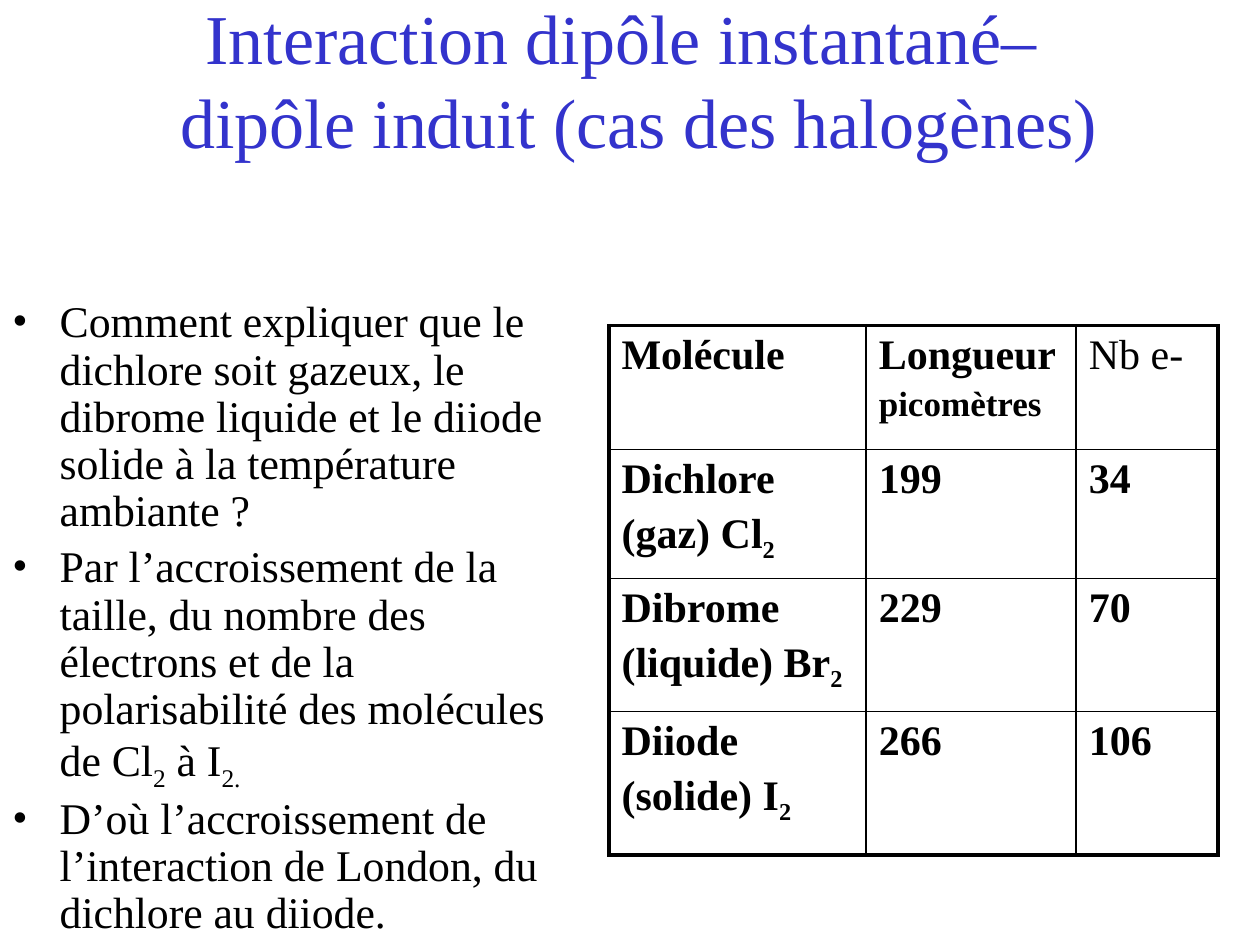
from lxml import etree
from pptx import Presentation
from pptx import util as u
from pptx.dml.color import RGBColor
from pptx.enum import text
from pptx.oxml import ns

BLUE = RGBColor(0x33, 0x33, 0xCC)
BLACK = RGBColor(0, 0, 0)
FONT = "Times New Roman"
THICK, THIN = 2.25, 1

TITLE = ["Interaction dipôle instantané– ", " dipôle induit (cas des halogènes)"]
# Odd parts between "~" marks are subscripts.
POINTS = [
    "Comment expliquer que le dichlore soit gazeux, le dibrome liquide "
    "et le diiode solide à la température ambiante ?",
    "Par l’accroissement de la taille, du nombre des électrons et de la "
    "polarisabilité des molécules de Cl~2~ à I~2.~",
    "D’où l’accroissement de l’interaction de London, du dichlore au diiode.",
]
# Each cell is a list of (text, size, bold) lines.
HEAD = [
    [("Molécule", 24, True)],
    [("Longueur", 24, True), ("picomètres", 20, True)],
    [("Nb e-", 24, False)],
]
DATA = [
    ("Dichlore", "(gaz) Cl~2~", "199", "34"),
    ("Dibrome", "(liquide) Br~2~", "229", "70"),
    ("Diiode", "(solide) I~2~", "266", "106"),
]
COLS = [147, 120, 81]
ROWS = [71, 71, 76, 82]


def sub(parent, tag, **attrs):
    """Append a drawing element to parent."""
    return etree.SubElement(parent, ns.qn("a:" + tag), attrs)


class Page:
    def __init__(self, slide):
        self.slide = slide

    def runs(self, para, words, size, color=BLACK, bold=False):
        """Add words to para, one run for each plain or subscript part."""
        for i, part in enumerate(words.split("~")):
            if not part:
                continue
            run = para.add_run()
            run.text = part
            font = run.font
            font.name, font.size, font.bold = FONT, u.Pt(size), bold
            font.color.rgb = color
            if i % 2:
                run._r.get_or_add_rPr().set("baseline", "-25000")

    def paras(self, frame, count):
        """Yield count paragraphs, starting with the one already there."""
        for i in range(count):
            yield frame.add_paragraph() if i else frame.paragraphs[0]

    def title(self, lines, x, y, w, h):
        shape = self.slide.shapes.title
        shape.left, shape.top, shape.width, shape.height = map(u.Pt, (x, y, w, h))
        frame = shape.text_frame
        frame.auto_size = text.MSO_AUTO_SIZE.NONE
        frame.vertical_anchor = text.MSO_ANCHOR.MIDDLE
        para = frame.paragraphs[0]
        para.alignment = text.PP_ALIGN.CENTER
        for i, line in enumerate(lines):
            if i:
                para.add_line_break()
            self.runs(para, line, 40, BLUE)

    def list(self, items, x, y, w, h, size=25):
        frame = self.slide.shapes.add_textbox(*map(u.Pt, (x, y, w, h))).text_frame
        frame.word_wrap = True
        for para, item in zip(self.paras(frame, len(items)), items):
            para.line_spacing = 0.9
            para.space_before = u.Pt(size * 0.2)
            props = para._p.get_or_add_pPr()
            props.set("marL", str(u.Pt(27)))
            props.set("indent", str(u.Pt(-27)))
            sub(props, "buFont", typeface=FONT)
            sub(props, "buChar", char="•")
            self.runs(para, item, size)

    def edge(self, cell, side, width):
        line = sub(cell._tc.get_or_add_tcPr(), "ln" + side, w=str(u.Pt(width)))
        sub(sub(line, "solidFill"), "srgbClr", val=str(BLACK))

    def table(self, rows, x, y, cols, heights):
        box = map(u.Pt, (x, y, sum(cols), sum(heights)))
        table = self.slide.shapes.add_table(len(rows), len(cols), *box).table
        table.first_row = table.horz_banding = False
        for col, width in zip(table.columns, cols):
            col.width = u.Pt(width)
        for row, height in zip(table.rows, heights):
            row.height = u.Pt(height)
        for r, row in enumerate(rows):
            for c, lines in enumerate(row):
                cell = table.cell(r, c)
                outer = {"L": c == 0, "R": c == len(cols) - 1,
                         "T": r == 0, "B": r == len(rows) - 1}
                for side, thick in outer.items():
                    self.edge(cell, side, THICK if thick else THIN)
                cell.fill.background()
                paras = self.paras(cell.text_frame, len(lines))
                for para, (words, size, bold) in zip(paras, lines):
                    para.space_before = u.Pt(size * 0.2)
                    self.runs(para, words, size, bold=bold)


def main():
    deck = Presentation()
    deck.slide_width, deck.slide_height = u.Pt(720), u.Pt(540)
    page = Page(deck.slides.add_slide(deck.slide_layouts[5]))
    page.title(TITLE, 54, 0, 612, 90)
    page.list(POINTS, 0, 168, 342, 324)
    body = [[[(name, 24, True), (state, 24, True)],
             [(length, 24, True)], [(count, 24, True)]]
            for name, state, length, count in DATA]
    page.table([HEAD] + body, 348, 186, COLS, ROWS)
    deck.save("out.pptx")


if __name__ == "__main__":
    main()
